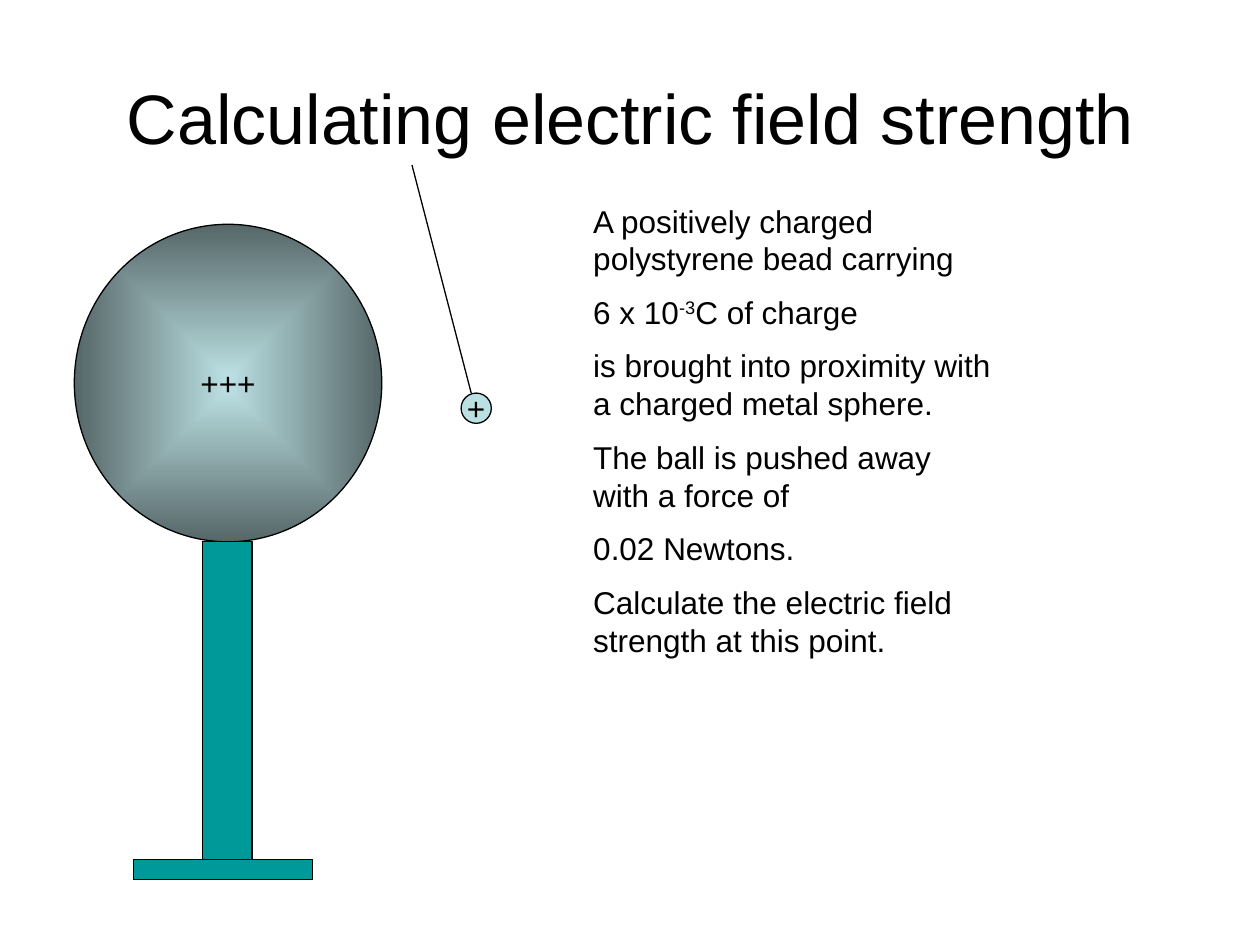
import pptx
import pptx.util
import pptx.dml.color
import pptx.enum.shapes
import pptx.enum.text
import pptx.oxml
import pptx.oxml.ns
from lxml import etree

Inches = pptx.util.Inches
Pt = pptx.util.Pt
qn = pptx.oxml.ns.qn
SHAPES = pptx.enum.shapes.MSO_SHAPE
ALIGN = pptx.enum.text.PP_ALIGN
ANCHOR = pptx.enum.text.MSO_ANCHOR

PROBLEM = [
    ["A positively charged polystyrene bead carrying"],
    ["6 x 10", ("-3", 30), "C of charge"],
    ["is brought into proximity with a charged metal sphere."],
    ["The ball is pushed away with a force of"],
    ["0.02 Newtons."],
    ["Calculate the electric field strength at this point."],
]


def color(value):
    return pptx.dml.color.RGBColor.from_string(value)


def place(shape, left, top, width, height):
    shape.left, shape.top = Inches(left), Inches(top)
    shape.width, shape.height = Inches(width), Inches(height)


def write(paragraph, text, size=18, font="Arial", fill="000000", align=ALIGN.LEFT, raised=0):
    paragraph.alignment = align
    run = paragraph.add_run()
    run.text = text
    run.font.size = Pt(size)
    run.font.name = font
    run.font.color.rgb = color(fill)
    if raised:
        run._r.get_or_add_rPr().set("baseline", str(raised * 1000))


def outline(line):
    line.color.rgb = color("000000")
    line.width = Pt(0.75)


def add_body(slide, kind, left, top, width, height, fill, label=""):
    body = slide.shapes.add_shape(kind, 0, 0, 0, 0)
    place(body, left, top, width, height)
    body.shadow.inherit = False
    body.fill.solid()
    body.fill.fore_color.rgb = color(fill)
    outline(body.line)
    if label:
        frame = body.text_frame
        frame.word_wrap = False
        frame.vertical_anchor = ANCHOR.MIDDLE
        write(frame.paragraphs[0], label, align=ALIGN.CENTER)
    return body


def shade_from_center(body, inner, outer):
    body.fill.gradient()
    for stop, value in zip(body.fill.gradient_stops, (inner, outer)):
        stop.color.rgb = color(value)
    gradient = body._element.spPr.find(qn("a:gradFill"))
    gradient.remove(gradient.find(qn("a:lin")))
    focus = etree.SubElement(gradient, qn("a:path"), path="rect")
    etree.SubElement(focus, qn("a:fillToRect"), l="50000", t="50000", r="50000", b="50000")


def add_thread(slide, start, end):
    thread = slide.shapes.add_connector(
        pptx.enum.shapes.MSO_CONNECTOR.STRAIGHT, *map(Inches, start + end))
    outline(thread.line)
    etree.SubElement(thread._element.spPr, qn("a:effectLst"))


def add_title(slide, text):
    title = slide.shapes.title
    place(title, 0.5, 0.3, 9, 1.25)
    title.text_frame.vertical_anchor = ANCHOR.MIDDLE
    write(title.text_frame.paragraphs[0], text, size=40, align=ALIGN.CENTER)


def add_problem(slide, statements):
    problem = slide.shapes.add_textbox(Inches(4.61), Inches(1.55), Inches(3.39), Inches(4.31))
    frame = problem.text_frame
    frame.word_wrap = True
    frame.auto_size = pptx.enum.text.MSO_AUTO_SIZE.SHAPE_TO_FIT_TEXT
    for index, parts in enumerate(statements):
        paragraph = frame.add_paragraph() if index else frame.paragraphs[0]
        paragraph.space_before = Pt(9 if index else 0)
        for part in parts:
            text, raised = (part, 0) if isinstance(part, str) else part
            write(paragraph, text, raised=raised)


def main():
    presentation = pptx.Presentation()
    presentation.slide_width, presentation.slide_height = Inches(10), Inches(7.5)
    slide = presentation.slides.add_slide(presentation.slide_layouts[5])

    add_title(slide, "Calculating electric field strength")
    add_body(slide, SHAPES.OVAL, 3.66, 3.12, 0.24, 0.24, "BBE0E3", "+")
    sphere = add_body(slide, SHAPES.OVAL, 0.59, 1.78, 2.44, 2.52, "BBE0E3", "+++")
    shade_from_center(sphere, "BBE0E3", "566768")
    add_body(slide, SHAPES.RECTANGLE, 1.61, 4.3, 0.39, 2.52, "009999")
    add_body(slide, SHAPES.RECTANGLE, 1.06, 6.82, 1.42, 0.16, "009999")
    add_thread(slide, (3.27, 1.31), (3.74, 3.12))
    add_problem(slide, PROBLEM)

    presentation.save("out.pptx")


if __name__ == "__main__":
    main()
